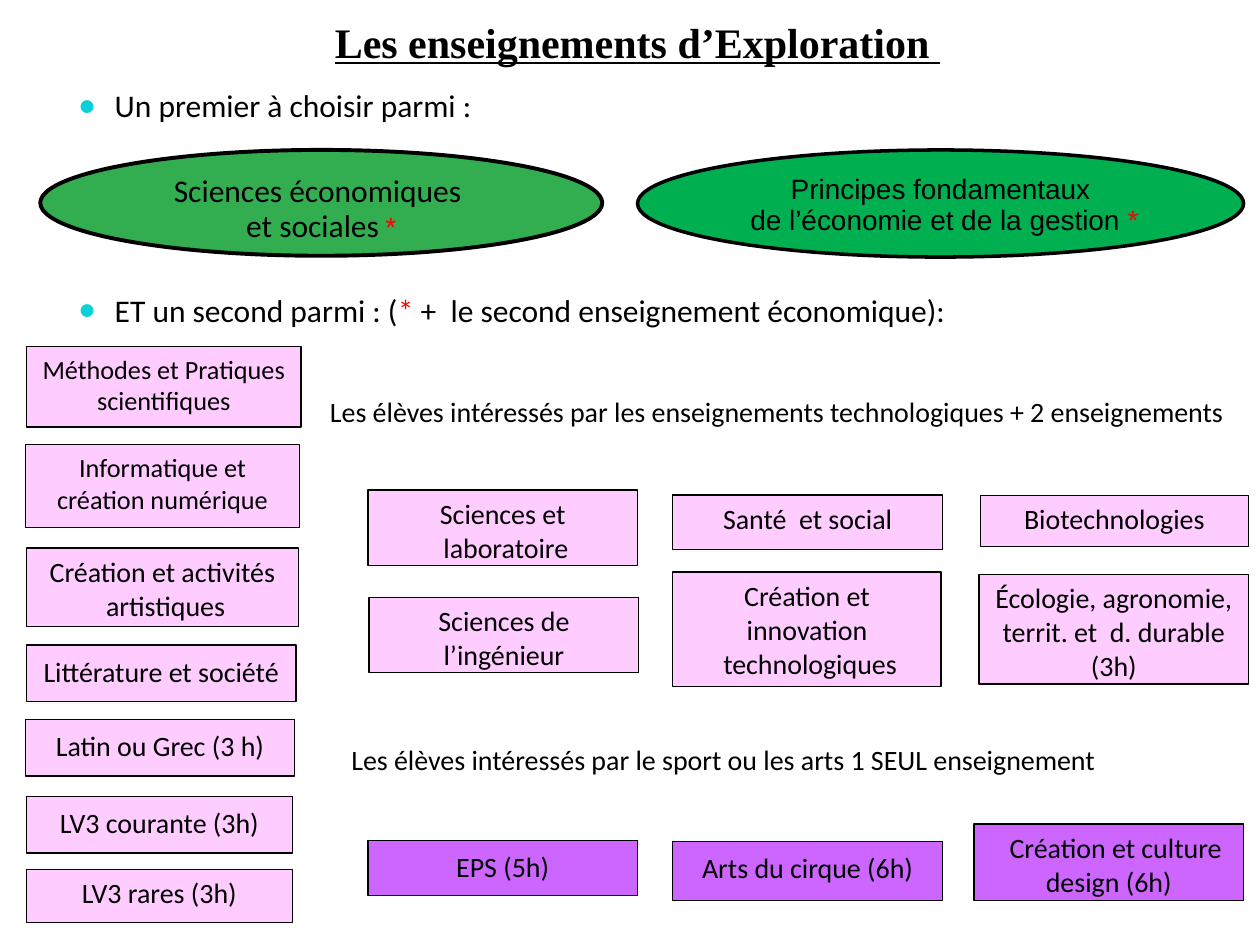
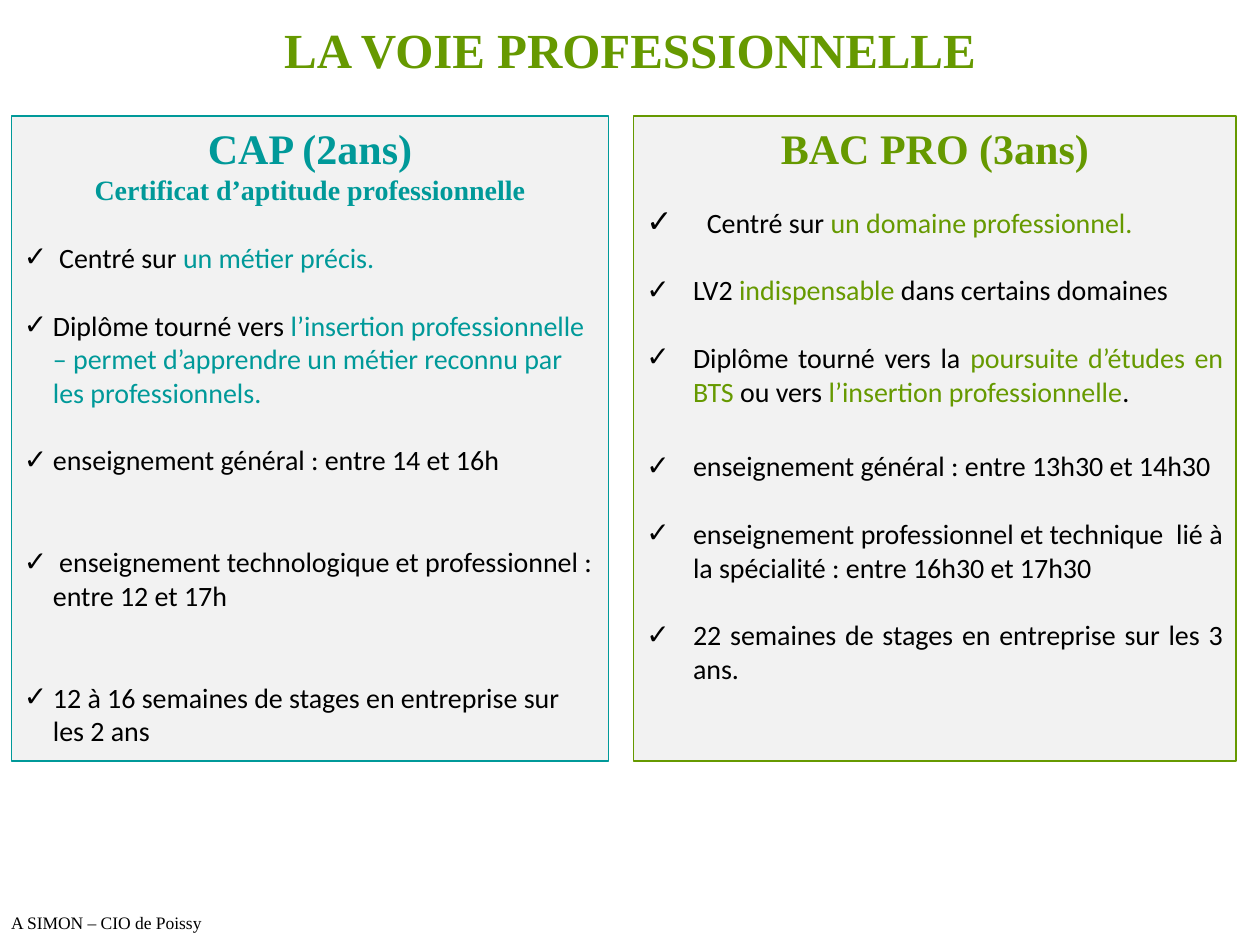
import pptx
import pptx.util
import pptx.dml.color
import pptx.enum.shapes
import pptx.enum.text
import pptx.oxml.ns
from lxml import etree

Inches = pptx.util.Inches
Pt = pptx.util.Pt
KIND = pptx.enum.shapes.MSO_SHAPE
ALIGN = pptx.enum.text.PP_ALIGN
COLORS = {
    "black": "000000", "red": "FF0000", "aqua": "0BD0D9",
    "leaf": "32AE51", "green": "00B050", "pink": "FFCCFF",
    "purple": "CC66FF", "teal": "009999", "olive": "669900", "grey": "F2F2F2",
}
SERIF = "Times New Roman"


def rgb(name):
    return pptx.dml.color.RGBColor.from_string(COLORS[name])


def write(para, text, size=16, font="Calibri", color="black", bold=False,
          under=False, align=ALIGN.LEFT, line=1.0, before=0, left=0, first=0,
          mark=None, tint="black", scale=100):
    """Fill a paragraph; text is a string or a list of strings and (string, changes)."""
    para.alignment = align
    para.line_spacing = line
    para.space_before = Pt(before)
    props = para._p.get_or_add_pPr()
    props.set("marL", str(Inches(left)))
    props.set("indent", str(Inches(first)))
    qn = pptx.oxml.ns.qn
    if mark:
        clr = etree.SubElement(props, qn("a:buClr"))
        etree.SubElement(clr, qn("a:srgbClr"), val=COLORS[tint])
        etree.SubElement(props, qn("a:buSzPct"), val=str(scale * 1000))
        etree.SubElement(props, qn("a:buChar"), char=mark)
    else:
        etree.SubElement(props, qn("a:buNone"))
    for part in [text] if isinstance(text, str) else text:
        words, diff = (part, {}) if isinstance(part, str) else part
        look = {"size": size, "font": font, "color": color, **diff}
        run = para.add_run()
        run.text = words
        run.font.size = Pt(look["size"])
        run.font.name = look["font"]
        run.font.color.rgb = rgb(look["color"])
        run.font.bold = bold
        run.font.underline = under


class Deck:
    """Holds the shared style and the current slide."""

    def __init__(self):
        self.file = pptx.Presentation()
        self.file.slide_width = Inches(10)
        self.file.slide_height = Inches(7.5)
        self.slide = None

    def add(self):
        self.slide = self.file.slides.add_slide(self.file.slide_layouts[3])

    def place(self, shape, box):
        shape.left, shape.top, shape.width, shape.height = map(Inches, box)

    def fill(self, shape, lines, top=0.05, **style):
        """Put paragraphs in a shape; each line is a text or a dict of text and format."""
        frame = shape.text_frame
        frame.word_wrap = True
        frame.auto_size = pptx.enum.text.MSO_AUTO_SIZE.NONE
        frame.vertical_anchor = pptx.enum.text.MSO_ANCHOR.TOP
        frame.margin_left = frame.margin_right = Inches(0.1)
        frame.margin_top, frame.margin_bottom = Inches(top), Inches(0.05)
        for num, item in enumerate(lines):
            para = frame.add_paragraph() if num else frame.paragraphs[0]
            item = item if isinstance(item, dict) else {"text": item}
            write(para, **{**style, **item})

    def paint(self, shape, back, edge, width):
        shape.shadow.inherit = False
        shape.fill.solid()
        shape.fill.fore_color.rgb = rgb(back)
        shape.line.color.rgb = rgb(edge)
        shape.line.width = Pt(width)

    def title(self, text, box, **style):
        shape = self.slide.shapes.title
        self.place(shape, box)
        self.fill(shape, [text], font=SERIF, bold=True, align=ALIGN.CENTER, **style)

    def body(self, slot, box, lines, **style):
        shape = self.slide.placeholders[slot]
        self.place(shape, box)
        self.fill(shape, lines, **style)
        return shape

    def panel(self, slot, box, lines, color, **style):
        shape = self.body(slot, box, lines, **style)
        self.paint(shape, "grey", color, 0.75)

    def note(self, text, box, **style):
        shape = self.slide.shapes.add_textbox(*map(Inches, box))
        self.fill(shape, [text], **style)

    def tile(self, lines, box, back="pink", kind=KIND.RECTANGLE, edge=0.75,
             line=1.01, **style):
        shape = self.slide.shapes.add_shape(kind, *map(Inches, box))
        self.paint(shape, back, "black", edge)
        self.fill(shape, lines, align=ALIGN.CENTER, line=line, **style)


def explore(deck):
    deck.add()
    deck.title("Les enseignements d’Exploration ", (0.56, 0.1, 9, 0.76),
               size=24, under=True, line=0.98)
    star = ("*", {"color": "red"})
    dot = dict(size=18, line=1.02, left=0.29, first=-0.29, mark="●",
               tint="aqua", scale=95)
    deck.body(1, (0.52, 0.63, 8.62, 0.43), ["Un premier à choisir parmi :"], **dot)
    deck.body(2, (0.52, 2.25, 8.62, 0.53), [[
        "ET un second parmi : (", ("* ", {"color": "red"}),
        "+  le second enseignement économique):"]], **dot)

    oval = dict(kind=KIND.OVAL, line=0.93, top=0.07)
    small = {"size": 16, "color": "red"}
    deck.tile(["Sciences économiques ",
               ["et sociales", (" ", small), ("*", {**small, "font": "Arial"})]],
              (0.32, 1.19, 4.46, 0.84), "leaf", size=18, edge=2.25, **oval)
    deck.tile(["Principes fondamentaux",
               [" de l’économie et de la gestion ", star]],
              (5.06, 1.19, 4.81, 0.85), "green", font="Arial", edge=2, **oval)

    low = {"top": 0.07}
    for lines, box, style in [
        (["Méthodes et Pratiques", "scientifiques"],
         (0.21, 2.75, 2.18, 0.64), {"size": 15}),
        (["Informatique et création numérique"],
         (0.2, 3.53, 2.18, 0.66), {"size": 15}),
        (["Création et activités", " artistiques"], (0.21, 4.35, 2.16, 0.62), {}),
        (["Littérature et société"], (0.21, 5.12, 2.14, 0.45), low),
        (["Latin ou Grec (3 h)"], (0.2, 5.71, 2.14, 0.45), low),
        (["LV3 courante (3h)"], (0.21, 6.32, 2.11, 0.45), low),
        (["LV3 rares (3h)"], (0.21, 6.9, 2.11, 0.42), {}),
        (["Sciences et", " laboratoire"], (2.92, 3.89, 2.14, 0.6), {}),
        (["Santé  et social"], (5.34, 3.93, 2.14, 0.43), {}),
        (["Biotechnologies"], (7.78, 3.93, 2.13, 0.41), {}),
        (["Sciences de l’ingénieur"], (2.93, 4.74, 2.14, 0.6), {}),
        (["Création et innovation", " technologiques"],
         (5.34, 4.54, 2.13, 0.91), {}),
        (["Écologie, agronomie, territ. et  d. durable (3h)"],
         (7.77, 4.56, 2.14, 0.87), {}),
        (["EPS (5h)"], (2.92, 6.67, 2.14, 0.44), {"back": "purple", **low}),
        (["Arts du cirque (6h)"],
         (5.34, 6.68, 2.14, 0.47), {"back": "purple", **low}),
        (["Création et culture design (6h)"],
         (7.73, 6.54, 2.14, 0.61), {"back": "purple", "first": 0.11}),
    ]:
        deck.tile(lines, box, **style)

    deck.note("Les élèves intéressés par les enseignements technologiques"
              " + 2 enseignements", (2.52, 3.1, 7.45, 0.36), line=0.95)
    deck.note("Les élèves intéressés par le sport ou les arts 1 SEUL enseignement",
              (2.69, 5.86, 6.86, 0.36), line=0.95)


def career(deck):
    deck.add()
    deck.title("LA VOIE PROFESSIONNELLE", (0.75, 0.12, 8.5, 0.79),
               size=28, color="olive", line=0.95, top=0.07)
    gap = 19.5

    def head(text, color, size=24):
        return dict(text=text, size=size, color=color, font=SERIF, bold=True,
                    align=ALIGN.CENTER, mark=None, left=0, first=0)

    def item(*text, before=gap, **style):
        return dict(text=text, before=before, **style)

    teal, olive = {"color": "teal"}, {"color": "olive"}
    deck.panel(1, (0.09, 0.92, 4.74, 5.12), [
        head("CAP (2ans)", "teal"),
        head("Certificat d’aptitude professionnelle", "teal", 16),
        item(" Centré sur ", ("un métier précis.", teal)),
        item("Diplôme tourné vers ",
             ("l’insertion professionnelle – permet d’apprendre un métier "
              "reconnu par les professionnels.", teal)),
        item("enseignement général : entre 14 et 16h"),
        item(" enseignement technologique et professionnel : entre 12 et 17h",
             before=2 * gap),
        item("12 à 16 semaines de stages en entreprise sur les 2 ans",
             before=2 * gap),
    ], "teal", mark="✓", left=0.23, first=-0.23)
    deck.panel(2, (5.03, 0.92, 4.78, 5.12), [
        head("BAC PRO (3ans)", "olive"),
        item("Centré sur ", ("un domaine professionnel.", olive),
             before=18.5, left=0.48, first=-0.48, scale=112),
        item("LV2", (" indispensable ", olive), "dans certains domaines"),
        item("Diplôme tourné vers la ", ("poursuite d’études en BTS ", olive),
             "ou vers ", ("l’insertion professionnelle", olive), "."),
        item("enseignement général : entre 13h30 et 14h30", before=23.5),
        item("enseignement professionnel et technique  lié à la spécialité : "
             "entre 16h30 et 17h30"),
        item("22 semaines de stages en entreprise sur les 3 ans."),
    ], "olive", mark="✓", left=0.37, first=-0.37, align=ALIGN.JUSTIFY)
    deck.note("A SIMON – CIO de Poissy", (-0.01, 7.19, 2.47, 0.27),
              size=10, font=SERIF)


def main():
    deck = Deck()
    explore(deck)
    career(deck)
    deck.file.save("out.pptx")


if __name__ == "__main__":
    main()
